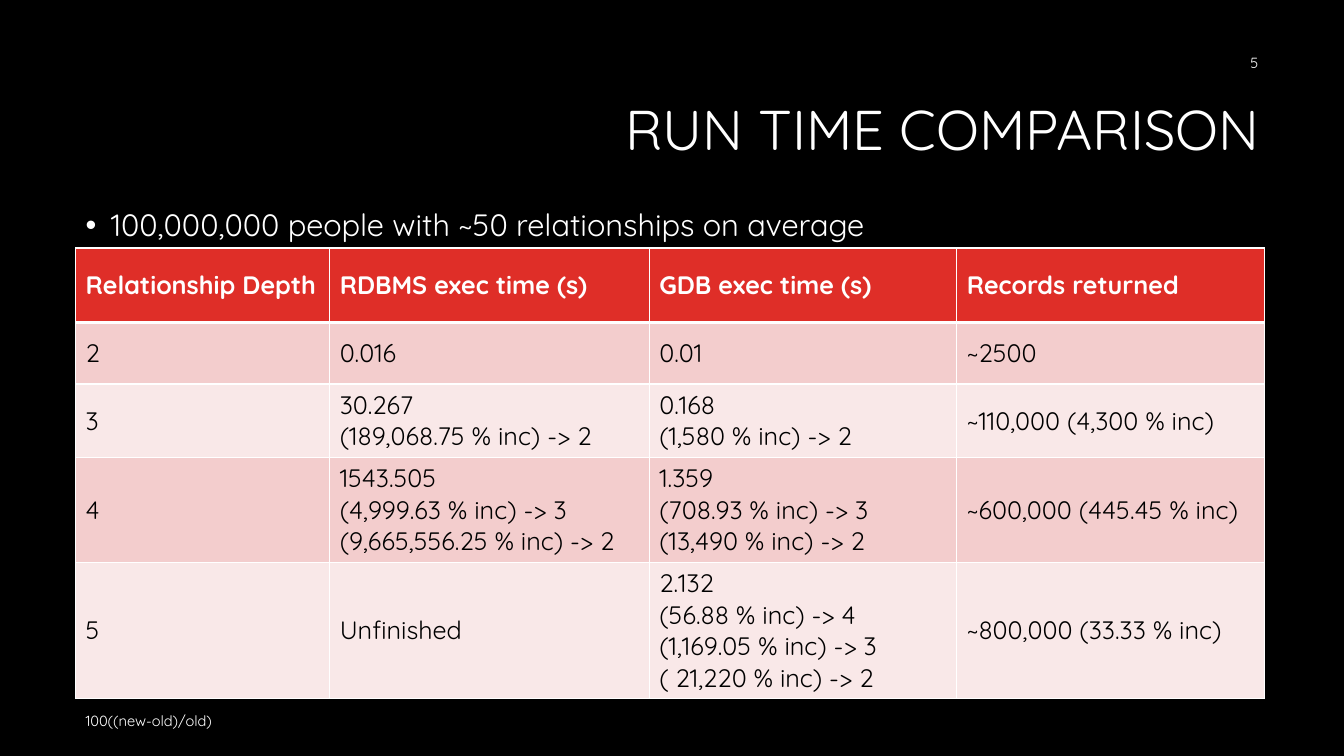
from pptx import Presentation, util as u
from pptx.dml.color import RGBColor
from pptx.enum import text as t
from pptx.oxml import parse_xml
from pptx.oxml.ns import nsdecls

INKS = {"night": "000000", "white": "FFFFFF", "red": "DF2E28",
        "rose": "F3CDCD", "blush": "F9E8E8"}

COLS = [2.52, 3.17, 3.05, 3.05]
ROWS = [0.74] + [0.61] * 4
CELLS = [
    ["Relationship Depth", "RDBMS exec time (s)", "GDB exec time (s)",
     "Records returned"],
    ["2", "0.016", "0.01", "~2500"],
    ["3", "30.267\n(189,068.75 % inc) -> 2", "0.168\n(1,580 % inc) -> 2",
     "~110,000 (4,300 % inc)"],
    ["4", "1543.505\n(4,999.63 % inc) -> 3\n(9,665,556.25 % inc) -> 2",
     "1.359\n(708.93 % inc) -> 3\n(13,490 % inc) -> 2",
     "~600,000 (445.45 % inc)"],
    ["5", "Unfinished",
     "2.132\n(56.88 % inc) -> 4\n(1,169.05 % inc) -> 3\n( 21,220 % inc) -> 2",
     "~800,000 (33.33 % inc)"],
]


def ink(name):
    return RGBColor.from_string(INKS[name])


def apply(target, form):
    for key, value in form.items():
        setattr(target, key, value)


class Deck:
    face = "Quicksand"

    def __init__(self, wide, high):
        self.show = Presentation()
        apply(self.show, {"slide_width": u.Inches(wide),
                          "slide_height": u.Inches(high)})
        self.slide = self.show.slides.add_slide(self.show.slide_layouts[1])
        back = self.slide.background.fill
        back.solid()
        back.fore_color.rgb = ink("night")

    def style(self, para, size, color="white", bold=False, **form):
        apply(para, form)
        apply(para.font, {"name": self.face, "size": u.Pt(size),
                          "bold": bold})
        para.font.color.rgb = ink(color)

    def fill(self, frame, words, size, **form):
        """Set the words of a text frame, one paragraph for each line."""
        frame.text = words
        for para in frame.paragraphs:
            self.style(para, size, **form)

    def place(self, shape, box, anchor):
        sides = ("left", "top", "width", "height")
        apply(shape, dict(zip(sides, map(u.Inches, box))))
        apply(shape.text_frame, {"word_wrap": True, "vertical_anchor": anchor,
                                 "auto_size": t.MSO_AUTO_SIZE.NONE})

    def title(self, words, box):
        shape = self.slide.shapes.title
        self.place(shape, box, t.MSO_ANCHOR.MIDDLE)
        self.fill(shape.text_frame, words, 40, line_spacing=0.9,
                  alignment=t.PP_ALIGN.RIGHT)

    def list(self, words, box):
        shape = self.slide.placeholders[1]
        self.place(shape, box, t.MSO_ANCHOR.TOP)
        shape.text_frame.text = words
        for para in shape.text_frame.paragraphs:
            props = para._p.get_or_add_pPr()
            props.set("marL", str(u.Inches(0.25)))
            props.set("indent", str(-u.Inches(0.25)))
            props.append(parse_xml(f'<a:buChar {nsdecls("a")} char="•"/>'))
            self.style(para, 22, line_spacing=0.9, space_before=u.Pt(0))

    def note(self, words, box, align):
        shape = self.slide.shapes.add_textbox(0, 0, 0, 0)
        self.place(shape, box, t.MSO_ANCHOR.MIDDLE)
        self.fill(shape.text_frame, words, 10.5, alignment=align)

    def edge(self, cell, side, points):
        cell._tc.get_or_add_tcPr().append(parse_xml(
            f'<a:ln{side} {nsdecls("a")} w="{u.Pt(points)}"><a:solidFill>'
            f'<a:srgbClr val="{INKS["white"]}"/></a:solidFill></a:ln{side}>'))

    def table(self, left, top):
        box = map(u.Inches, (left, top, sum(COLS), sum(ROWS)))
        grid = self.slide.shapes.add_table(len(ROWS), len(COLS), *box).table
        for col, wide in zip(grid.columns, COLS):
            col.width = u.Inches(wide)
        for i, (row, high) in enumerate(zip(grid.rows, ROWS)):
            row.height = u.Inches(high)
            head = i == 0
            shade = "red" if head else ("blush", "rose")[i % 2]
            for cell, words in zip(row.cells, CELLS[i]):
                self.fill(cell.text_frame, words, 18, bold=head,
                          color="white" if head else "night")
                cell.vertical_anchor = t.MSO_ANCHOR.MIDDLE
                for side in "LRTB":
                    thick = (side == "B" and head) or (side == "T" and i == 1)
                    self.edge(cell, side, 3 if thick else 1)
                cell.fill.solid()
                cell.fill.fore_color.rgb = ink(shade)


def main():
    deck = Deck(13.33, 7.5)
    deck.title("RUN TIME COMPARISON", (3.17, 0.61, 9.42, 1.41))
    deck.list("100,000,000 people with ~50 relationships on average",
              (0.75, 2.03, 11.83, 4.77))
    deck.table(0.75, 2.46)
    deck.note("5", (9.58, 0.42, 3, 0.4), t.PP_ALIGN.RIGHT)
    deck.note("100((new-old)/old)", (0.75, 6.95, 8.5, 0.4), t.PP_ALIGN.LEFT)
    deck.show.save("out.pptx")


if __name__ == "__main__":
    main()
